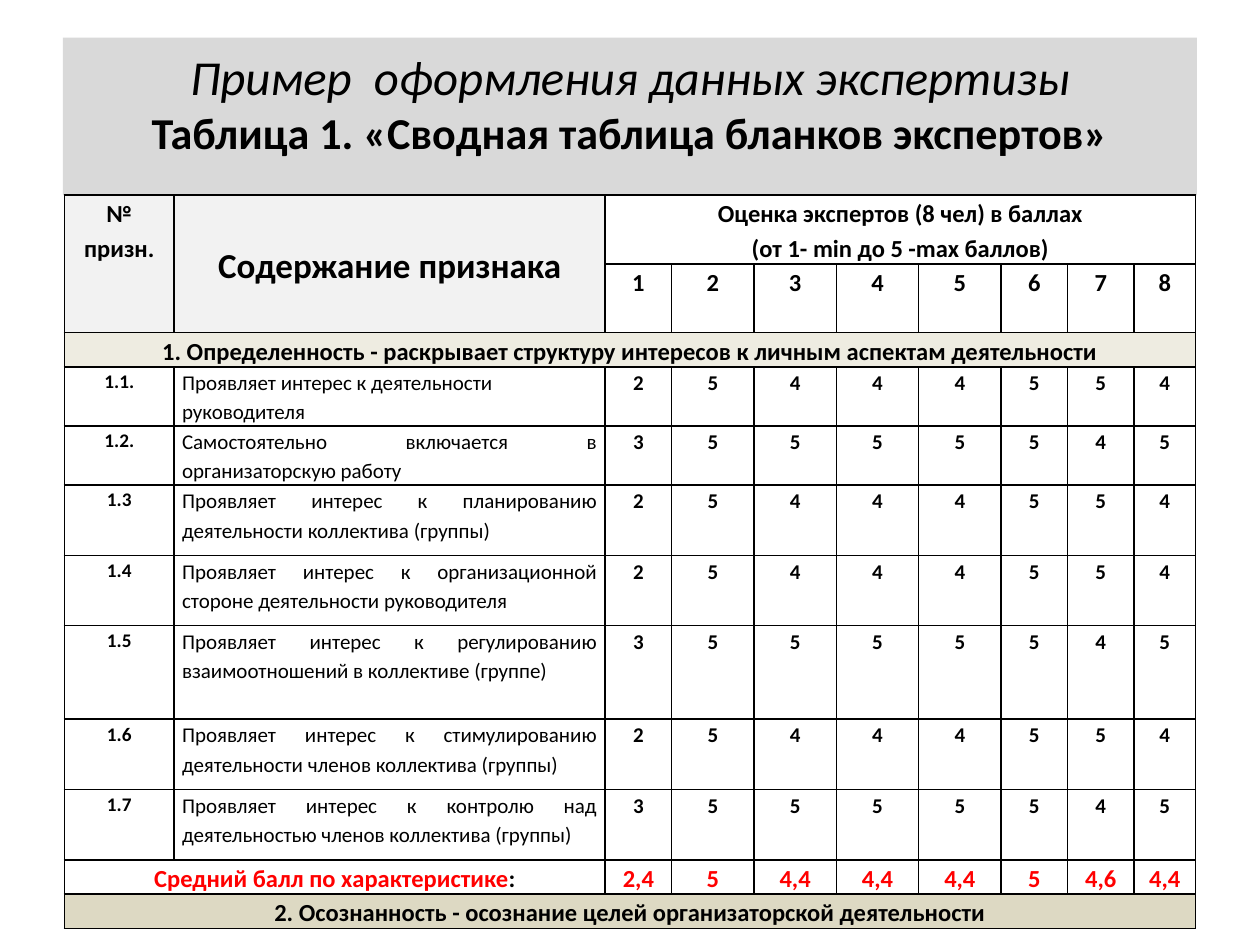
from dataclasses import dataclass
from typing import Optional

import pptx
import pptx.dml.color
import pptx.enum.shapes
import pptx.enum.text
import pptx.oxml
import pptx.oxml.ns
import pptx.util

Cm = pptx.util.Cm
Pt = pptx.util.Pt
Align = pptx.enum.text.PP_ALIGN
Anchor = pptx.enum.text.MSO_ANCHOR


@dataclass(frozen=True)
class Theme:
    font: str = "Calibri"
    black: str = "000000"
    red: str = "FF0000"
    title_fill: str = "D9D9D9"
    header_fill: str = "F2F2F2"
    first_section_fill: str = "EEECE1"
    second_section_fill: str = "DDD9C3"
    title_size: float = 27.9
    subtitle_size: float = 25.2
    column_size: float = 20
    heading_size: float = 14
    body_size: float = 12
    number_size: float = 11
    line_spacing: float = 1.15
    border: float = 1


THEME = Theme()


@dataclass(frozen=True)
class CellStyle:
    size: float
    bold: bool = True
    color: str = THEME.black
    align: Align = Align.CENTER
    anchor: Anchor = Anchor.TOP
    fill: Optional[str] = None


@dataclass(frozen=True)
class Feature:
    number: str
    text: str
    scores: str
    align: Align = Align.JUSTIFY


HEADING = CellStyle(THEME.heading_size)
NUMBER = CellStyle(THEME.number_size)
SCORE = CellStyle(THEME.body_size)
AVERAGE = CellStyle(THEME.heading_size, color=THEME.red)

FEATURES = [
    Feature("1.1.", "Проявляет интерес к деятельности руководителя", "25444554", Align.LEFT),
    Feature("1.2.", "Самостоятельно включается в организаторскую работу", "35555545"),
    Feature("1.3", "Проявляет интерес к планированию деятельности коллектива (группы)", "25444554"),
    Feature("1.4", "Проявляет интерес к организационной стороне деятельности руководителя", "25444554"),
    Feature("1.5", "Проявляет интерес к регулированию взаимоотношений в коллективе (группе)", "35555545"),
    Feature("1.6", "Проявляет интерес к стимулированию деятельности членов коллектива (группы)", "25444554"),
    Feature("1.7", "Проявляет интерес к контролю над деятельностью членов коллектива (группы)", "35555545"),
]
AVERAGES = ["2,4", "5", "4,4", "4,4", "4,4", "5", "4,6", "4,4"]

COLUMN_WIDTHS = [2.21, 8.69, 1.34, *[1.66] * 4, 1.34, 1.34, 1.24]
ROW_HEIGHTS = [1.39, 1.38, 0.69, 1.19, 1.19, 1.42, 1.42, 1.88, 1.42, 1.42, 0.69, 0.69]
FIRST_SCORE_COLUMN = 2
FIRST_FEATURE_ROW = 3


def rgb(color: str) -> pptx.dml.color.RGBColor:
    return pptx.dml.color.RGBColor.from_string(color)


def set_font(font, size: float, bold: bool, color: str, italic: bool = False) -> None:
    font.name, font.size = THEME.font, Pt(size)
    font.bold, font.italic = bold, italic
    font.color.rgb = rgb(color)


def add_borders(cell) -> None:
    properties = cell._tc.get_or_add_tcPr()
    for side in ("lnL", "lnR", "lnT", "lnB"):
        properties.append(pptx.oxml.parse_xml(
            f'<a:{side} {pptx.oxml.ns.nsdecls("a")} w="{Pt(THEME.border)}">'
            f'<a:solidFill><a:srgbClr val="{THEME.black}"/></a:solidFill></a:{side}>'))


def write_cell(cell, text: str, style: CellStyle) -> None:
    cell.text = text
    cell.vertical_anchor = style.anchor
    if style.fill:
        cell.fill.solid()
        cell.fill.fore_color.rgb = rgb(style.fill)
    for paragraph in cell.text_frame.paragraphs:
        paragraph.alignment = style.align
        paragraph.line_spacing = THEME.line_spacing
        set_font(paragraph.font, style.size, style.bold, style.color)


def write_scores(table, row: int, scores, style: CellStyle) -> None:
    for column, score in enumerate(scores, FIRST_SCORE_COLUMN):
        write_cell(table.cell(row, column), score, style)


def add_title(slide) -> None:
    shape = slide.shapes.add_shape(pptx.enum.shapes.MSO_SHAPE.RECTANGLE,
                                   Cm(1.27), Cm(0.76), Cm(22.86), Cm(3.18))
    shape.shadow.inherit = False
    shape.fill.solid()
    shape.fill.fore_color.rgb = rgb(THEME.title_fill)
    shape.line.fill.background()
    frame = shape.text_frame
    frame.word_wrap = True
    frame.vertical_anchor = Anchor.TOP
    frame.margin_top = Cm(0.18)
    paragraph = frame.paragraphs[0]
    paragraph.alignment = Align.CENTER
    run = paragraph.add_run()
    run.text = "Пример  оформления данных экспертизы"
    set_font(run.font, THEME.title_size, False, THEME.black, italic=True)
    paragraph.add_line_break()
    run = paragraph.add_run()
    run.text = "Таблица 1. «Сводная таблица бланков экспертов»"
    set_font(run.font, THEME.subtitle_size, True, THEME.black)


def add_empty_table(slide):
    table = slide.shapes.add_table(
        len(ROW_HEIGHTS), len(COLUMN_WIDTHS), Cm(1.3), Cm(3.93),
        Cm(sum(COLUMN_WIDTHS)), Cm(sum(ROW_HEIGHTS))).table
    table.first_row = table.horz_banding = False
    for column, width in zip(table.columns, COLUMN_WIDTHS):
        column.width = Cm(width)
    for row, height in zip(table.rows, ROW_HEIGHTS):
        row.height = Cm(height)
    for cell in table.iter_cells():
        cell.margin_left = cell.margin_right = Cm(0.16)
        cell.margin_top = cell.margin_bottom = 0
        add_borders(cell)
        cell.fill.background()
    return table


def fill_table(table) -> None:
    average_row = FIRST_FEATURE_ROW + len(FEATURES)
    last_row, last_column = len(ROW_HEIGHTS) - 1, len(COLUMN_WIDTHS) - 1

    # Merged cells: start row, start column, end row, end column
    for top, left, bottom, right in [
            (0, 0, 1, 0), (0, 1, 1, 1), (0, FIRST_SCORE_COLUMN, 0, last_column),
            (2, 0, 2, last_column), (average_row, 0, average_row, 1),
            (last_row, 0, last_row, last_column)]:
        table.cell(top, left).merge(table.cell(bottom, right))

    # Header
    write_cell(table.cell(0, 0), "№ призн.",
               CellStyle(THEME.heading_size, fill=THEME.header_fill))
    write_cell(table.cell(0, 1), "Содержание признака",
               CellStyle(THEME.column_size, anchor=Anchor.MIDDLE, fill=THEME.header_fill))
    write_cell(table.cell(0, FIRST_SCORE_COLUMN),
               "Оценка экспертов (8 чел) в баллах\n(от 1- min до 5 -max баллов)", HEADING)
    write_scores(table, 1, "12345678", HEADING)

    # Section bands
    write_cell(table.cell(2, 0),
               "1. Определенность - раскрывает структуру интересов к личным аспектам деятельности",
               CellStyle(THEME.heading_size, fill=THEME.first_section_fill))
    write_cell(table.cell(last_row, 0),
               "2. Осознанность - осознание целей организаторской деятельности",
               CellStyle(THEME.heading_size, fill=THEME.second_section_fill))

    # Features and their scores
    for row, feature in enumerate(FEATURES, FIRST_FEATURE_ROW):
        write_cell(table.cell(row, 0), feature.number, NUMBER)
        write_cell(table.cell(row, 1), feature.text,
                   CellStyle(THEME.body_size, bold=False, align=feature.align))
        write_scores(table, row, feature.scores, SCORE)

    # Averages
    label = table.cell(average_row, 0)
    write_cell(label, "Средний балл по характеристике", AVERAGE)
    colon = label.text_frame.paragraphs[0].add_run()
    colon.text = ":"
    colon.font.color.rgb = rgb(THEME.black)
    write_scores(table, average_row, AVERAGES, AVERAGE)


def main() -> None:
    presentation = pptx.Presentation()
    presentation.slide_width, presentation.slide_height = Cm(25.4), Cm(19.05)
    slide = presentation.slides.add_slide(presentation.slide_layouts[6])
    add_title(slide)
    fill_table(add_empty_table(slide))
    presentation.save("out.pptx")


if __name__ == "__main__":
    main()
